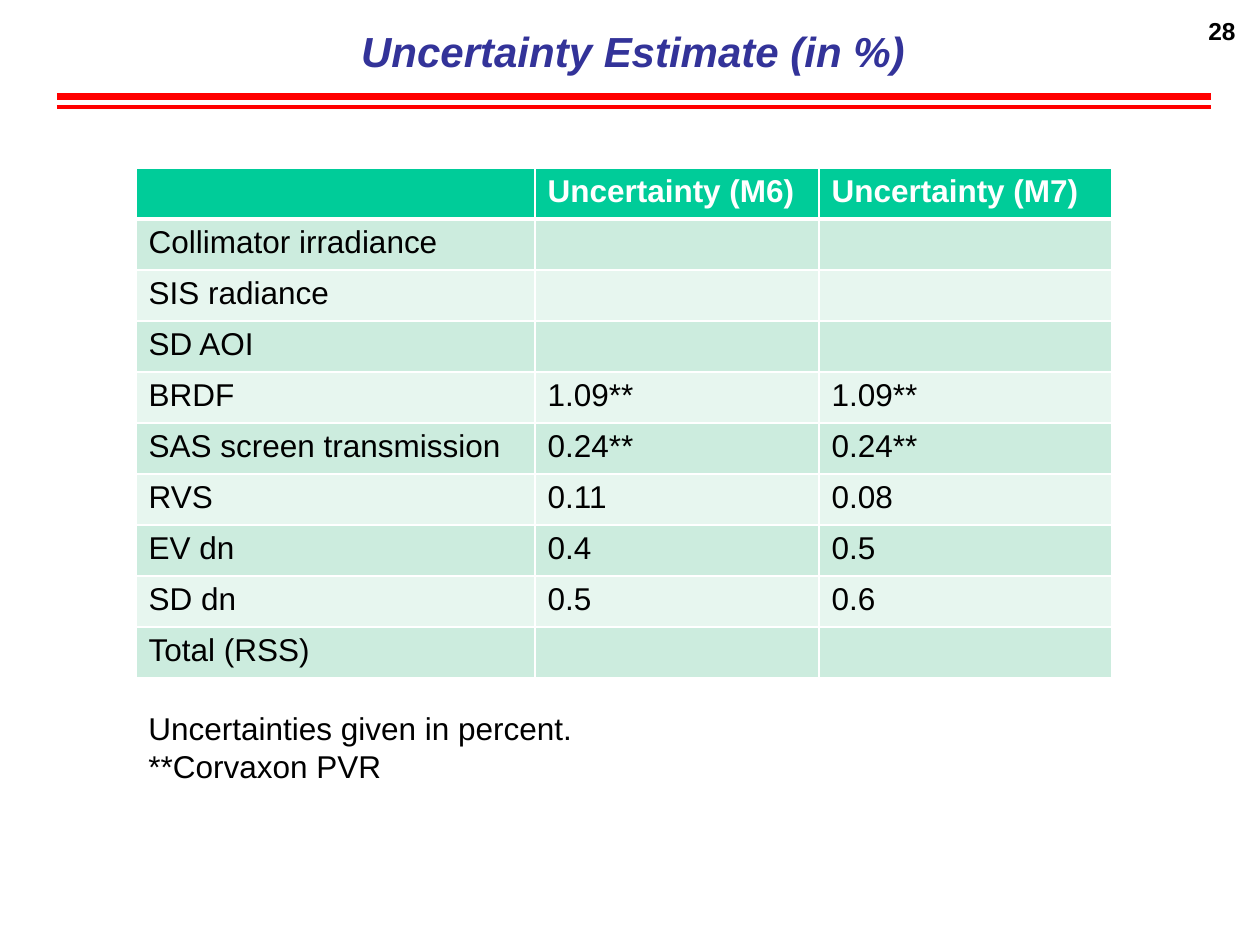
from dataclasses import dataclass

from lxml import etree
from pptx import Presentation
from pptx.dml import color
from pptx.enum import shapes, text
from pptx.oxml import ns
from pptx.util import Emu, Pt

EMU_PER_PX = 914400 / 126
FONT = "Arial"
BLACK, WHITE, RED, NAVY = "000000", "FFFFFF", "FF0000", "333399"
HEADER_FILL, BAND_FILLS = "00CC99", ("CCECDE", "E7F6EF")
COLUMN_WIDTHS = (399, 284, 293)
ROW_HEIGHT = 51


@dataclass
class Area:
    left: int
    top: int
    width: int
    height: int

    def emu(self) -> list[Emu]:
        return [px(v) for v in (self.left, self.top, self.width, self.height)]


@dataclass
class Rule:
    top: int
    weight: int


@dataclass
class Estimate:
    source: str
    m6: str = ""
    m7: str = ""


HEADER = Estimate("", "Uncertainty (M6)", "Uncertainty (M7)")
ESTIMATES = [
    Estimate("Collimator irradiance"),
    Estimate("SIS radiance"),
    Estimate("SD AOI"),
    Estimate("BRDF", "1.09**", "1.09**"),
    Estimate("SAS screen transmission", "0.24**", "0.24**"),
    Estimate("RVS", "0.11", "0.08"),
    Estimate("EV dn", "0.4", "0.5"),
    Estimate("SD dn", "0.5", "0.6"),
    Estimate("Total (RSS)"),
]
RULES = [Rule(97, 4), Rule(107, 2)]


def px(length: int) -> Emu:
    return Emu(round(length * EMU_PER_PX))


def rgb(value: str) -> color.RGBColor:
    return color.RGBColor.from_string(value)


def style(para, size: int, tint: str = BLACK, bold: bool = False,
          italic: bool = False, align=text.PP_ALIGN.LEFT) -> None:
    font = para.font
    font.name, font.size, font.bold, font.italic = FONT, Pt(size), bold, italic
    font.color.rgb = rgb(tint)
    para.alignment = align


def add_title(page, area: Area, wording: str) -> None:
    title = page.shapes.title
    title.left, title.top, title.width, title.height = area.emu()
    frame = title.text_frame
    frame.text = wording
    frame.auto_size = text.MSO_AUTO_SIZE.NONE
    frame.vertical_anchor = text.MSO_ANCHOR.MIDDLE
    style(frame.paragraphs[0], 24, NAVY, True, True, text.PP_ALIGN.CENTER)


def add_text(page, area: Area, lines: list[str], size: int, **look) -> None:
    frame = page.shapes.add_textbox(*area.emu()).text_frame
    frame.word_wrap = True
    frame.text = "\n".join(lines)
    for para in frame.paragraphs:
        style(para, size, **look)


def add_rule(page, rule: Rule) -> None:
    line = page.shapes.add_connector(
        shapes.MSO_CONNECTOR.STRAIGHT, px(57), px(rule.top), px(1211), px(rule.top))
    line.line.color.rgb = rgb(RED)
    line.line.width = Pt(rule.weight)
    etree.SubElement(line._element.spPr, ns.qn("a:effectLst"))


def set_borders(cell, top: int, bottom: int) -> None:
    properties = cell._tc.get_or_add_tcPr()
    weights = {"lnL": 1, "lnR": 1, "lnT": top, "lnB": bottom}
    for place, (tag, weight) in enumerate(weights.items()):
        border = etree.Element(ns.qn(f"a:{tag}"), w=str(Pt(weight)))
        fill = etree.SubElement(border, ns.qn("a:solidFill"))
        etree.SubElement(fill, ns.qn("a:srgbClr"), val=WHITE)
        properties.insert(place, border)


def add_estimates(page, left: int, top: int) -> None:
    rows = [HEADER, *ESTIMATES]
    area = Area(left, top, sum(COLUMN_WIDTHS), ROW_HEIGHT * len(rows))
    table = page.shapes.add_table(len(rows), len(COLUMN_WIDTHS), *area.emu()).table
    for column, width in zip(table.columns, COLUMN_WIDTHS):
        column.width = px(width)
    for index, estimate in enumerate(rows):
        table.rows[index].height = px(ROW_HEIGHT)
        header = index == 0
        values = (estimate.source, estimate.m6, estimate.m7)
        for cell, value in zip(table.rows[index].cells, values):
            cell.text = value
            style(cell.text_frame.paragraphs[0], 18, WHITE if header else BLACK, header)
            cell.fill.solid()
            cell.fill.fore_color.rgb = rgb(
                HEADER_FILL if header else BAND_FILLS[(index - 1) % 2])
            set_borders(cell, 3 if index == 1 else 1, 3 if header else 1)


def main() -> None:
    deck = Presentation()
    deck.slide_width, deck.slide_height = px(1260), px(945)
    page = deck.slides.add_slide(deck.slide_layouts.get_by_name("Title Only"))
    add_title(page, Area(66, 19, 1134, 63), "Uncertainty Estimate (in %)")
    add_text(page, Area(1157, 10, 91, 64), ["28"], 14,
             bold=True, align=text.PP_ALIGN.RIGHT)
    for rule in RULES:
        add_rule(page, rule)
    add_estimates(page, 136, 168)
    add_text(page, Area(136, 703, 966, 89),
             ["Uncertainties given in percent.", "**Corvaxon PVR"], 18)
    deck.save("out.pptx")


if __name__ == "__main__":
    main()
